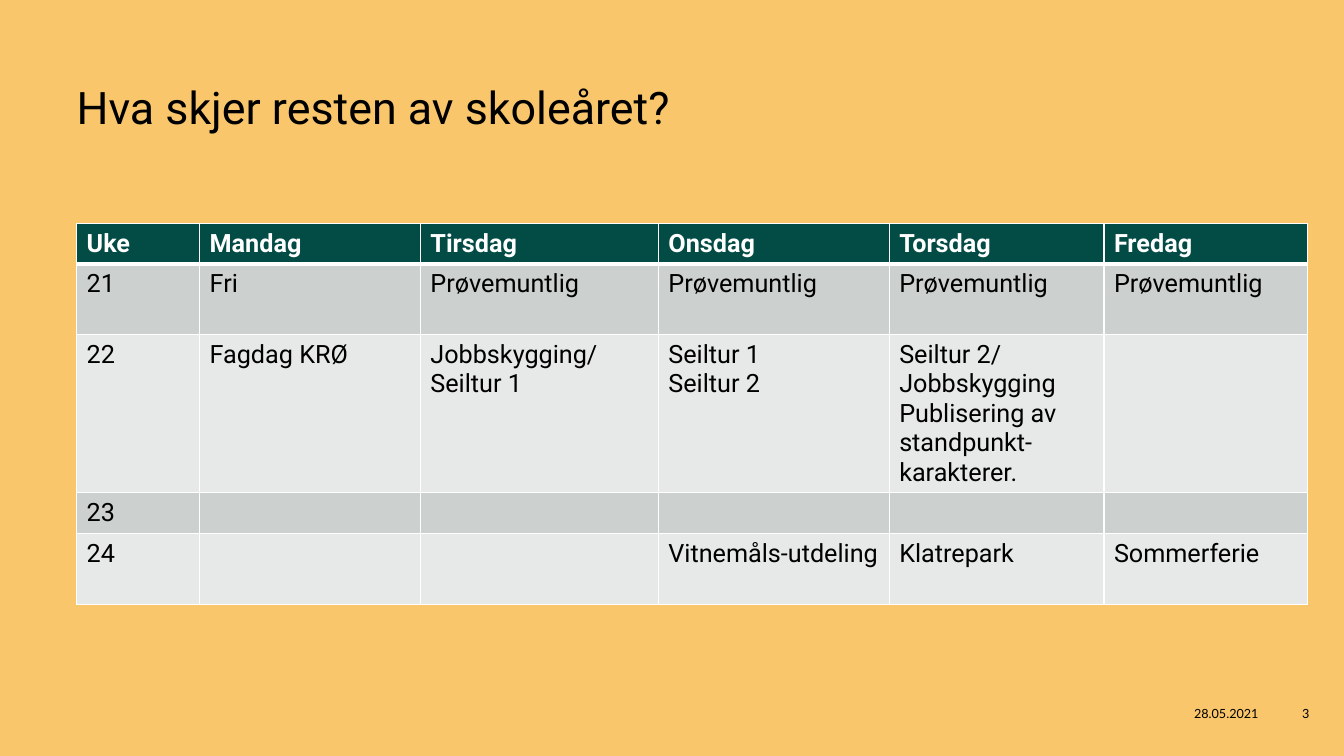
"""Build the slide with the timetable for the rest of the school year."""
from dataclasses import dataclass

from lxml.etree import SubElement
from pptx import Presentation
from pptx.dml.color import RGBColor
from pptx.enum.text import MSO_ANCHOR, PP_ALIGN
from pptx.oxml import parse_xml
from pptx.oxml.ns import nsdecls
from pptx.util import Inches, Pt


@dataclass(frozen=True)
class Theme:
    background: str = "F9C66B"
    header: str = "034B45"
    odd_row: str = "CCD0CF"
    even_row: str = "E7E9E9"
    text: str = "000000"
    white: str = "FFFFFF"
    body_font: str = "Roboto"
    footer_font: str = "Lato"
    title_size: int = 32
    table_size: int = 18
    footer_size: int = 9


theme = Theme()


def write_text(text_frame, text, size, font=theme.body_font, color=theme.text,
               bold=False, alignment=PP_ALIGN.LEFT):
    """Write paragraphs split at newlines, with line breaks at vertical tabs."""
    for index, content in enumerate(text.split("\n")):
        paragraph = text_frame.add_paragraph() if index else text_frame.paragraphs[0]
        paragraph.alignment = alignment
        for position, line in enumerate(content.split("\v")):
            if position:
                paragraph.add_line_break()
            run = paragraph.add_run()
            run.text = line
            run.font.size = Pt(size)
            run.font.name = font
            run.font.bold = bold
            run.font.color.rgb = RGBColor.from_string(color)


def set_borders(cell, top, bottom):
    """Draw white borders, with the given widths in points above and below."""
    properties = cell._tc.get_or_add_tcPr()
    widths = {"lnL": 1, "lnR": 1, "lnT": top, "lnB": bottom}
    for index, (tag, width) in enumerate(widths.items()):
        border = parse_xml(f'<a:{tag} {nsdecls("a")} w="{Pt(width)}"><a:solidFill/></a:{tag}>')
        SubElement(border[0], border[0].tag.replace("solidFill", "srgbClr"), val=theme.white)
        properties.insert(index, border)


presentation = Presentation()
presentation.slide_width = Inches(13.33)
presentation.slide_height = Inches(7.5)
slide = presentation.slides.add_slide(presentation.slide_layouts[5])
slide.background.fill.solid()
slide.background.fill.fore_color.rgb = RGBColor.from_string(theme.background)

title = slide.shapes.title
title.left, title.top = Inches(0.76), Inches(0.79)
title.width, title.height = Inches(10.36), Inches(1.43)
title_frame = title.text_frame
title_frame.margin_left = title_frame.margin_right = 0
title_frame.margin_top = title_frame.margin_bottom = 0
title_frame.vertical_anchor = MSO_ANCHOR.TOP
title_frame.word_wrap = True
write_text(title_frame, "Hva skjer resten av skoleåret?", theme.title_size)

timetable = [
    ["Uke", "Mandag", "Tirsdag", "Onsdag", "Torsdag", "Fredag"],
    ["21", "Fri"] + ["Prøvemuntlig"] * 4,
    ["22", "Fagdag KRØ", "Jobbskygging/\vSeiltur 1", "Seiltur 1\nSeiltur 2",
     "Seiltur 2/\nJobbskygging\vPublisering av standpunkt-karakterer.", ""],
    ["23", "", "", "", "", ""],
    ["24", "", "", "Vitnemåls-utdeling", "Klatrepark", "Sommerferie"],
]
column_widths = [1.22, 2.19, 2.36, 2.29, 2.13, 2.02]
row_heights = [0.4, 0.7, 1.57, 0.4, 0.7]

table = slide.shapes.add_table(
    len(row_heights), len(column_widths), Inches(0.76), Inches(2.22),
    Inches(sum(column_widths)), Inches(sum(row_heights))).table
for column, width in zip(table.columns, column_widths):
    column.width = Inches(width)
for row_index, (row, height) in enumerate(zip(table.rows, row_heights)):
    row.height = Inches(height)
    is_header = row_index == 0
    row_fill = theme.odd_row if row_index % 2 else theme.even_row
    for cell, text in zip(row.cells, timetable[row_index]):
        cell.fill.solid()
        cell.fill.fore_color.rgb = RGBColor.from_string(theme.header if is_header else row_fill)
        set_borders(cell, top=3 if row_index == 1 else 1, bottom=3 if is_header else 1)
        if text:
            write_text(cell.text_frame, text, theme.table_size, bold=is_header,
                       color=theme.white if is_header else theme.text)

footers = [
    ("28.05.2021", 11.11, 1.47, PP_ALIGN.RIGHT),
    ("3", 12.57, 0.76, PP_ALIGN.CENTER),
]
for text, left, width, alignment in footers:
    footer = slide.shapes.add_textbox(Inches(left), Inches(6.88), Inches(width), Inches(0.4))
    footer.text_frame.word_wrap = True
    footer.text_frame.vertical_anchor = MSO_ANCHOR.MIDDLE
    write_text(footer.text_frame, text, theme.footer_size, theme.footer_font, alignment=alignment)

presentation.save("out.pptx")
